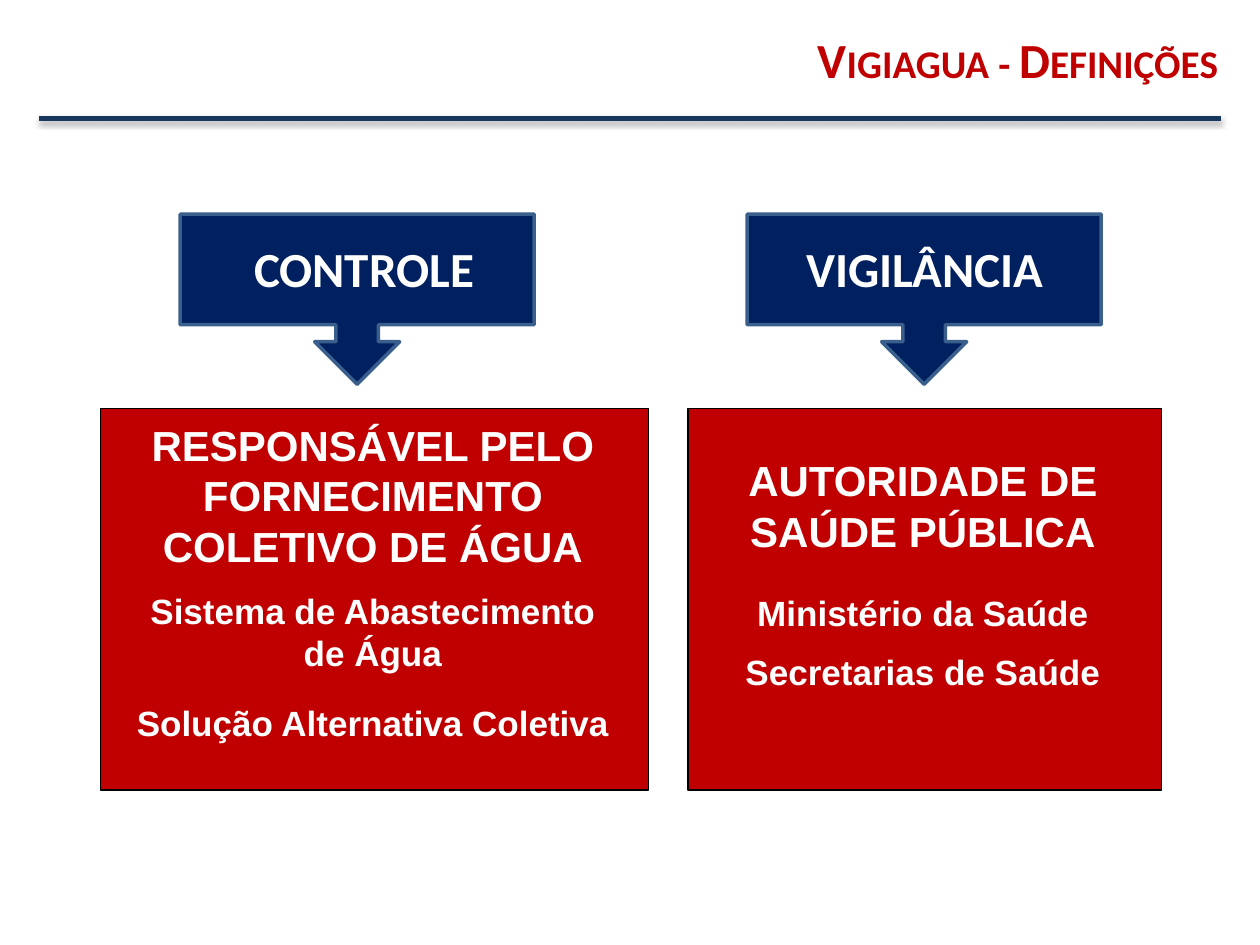
from lxml.etree import SubElement
from pptx import Presentation
from pptx.dml.color import RGBColor
from pptx.enum.shapes import MSO_CONNECTOR, MSO_SHAPE
from pptx.enum.text import MSO_ANCHOR, PP_ALIGN
from pptx.oxml.ns import qn
from pptx.util import Inches, Pt

NAVY = RGBColor(0x00, 0x20, 0x60)
STEEL = RGBColor(0x3A, 0x5F, 0x8C)
RULE_BLUE = RGBColor(0x17, 0x37, 0x5E)
RED = RGBColor(0xC0, 0x00, 0x00)
WHITE = RGBColor(0xFF, 0xFF, 0xFF)
BLACK = RGBColor(0x00, 0x00, 0x00)

TITLE = "Vigiagua - Definições"
COLUMNS = [
    {
        "heading": "CONTROLE",
        "callout_left": 1.43,
        "heading_box": (1.56, 1.84, 2.66, 0.57),
        "panel": (0.8, 3.24, 4.35, 3.03),
        "body_box": (0.93, 3.28, 4.06, 2.51),
        "body": [
            ("RESPONSÁVEL PELO FORNECIMENTO COLETIVO DE ÁGUA", {"size": 24}),
            ("Sistema de Abastecimento de Água", {"before": 11}),
            ("Solução Alternativa Coletiva", {"before": 6, "spacing": 1.4}),
        ],
    },
    {
        "heading": "VIGILÂNCIA",
        "callout_left": 5.93,
        "heading_box": (5.97, 1.84, 2.74, 0.57),
        "panel": (5.46, 3.24, 3.76, 3.03),
        "body_box": (5.76, 3.56, 3.13, 2.03),
        "body": [
            ("AUTORIDADE DE SAÚDE PÚBLICA", {"size": 24}),
            ("Ministério da Saúde", {"before": 11, "spacing": 1.4}),
            ("Secretarias de Saúde", {"spacing": 1.4}),
        ],
    },
]


def write(paragraph, text, size=20, font="Arial", color=WHITE,
          align=PP_ALIGN.CENTER, before=0, spacing=1.0, small_caps=False):
    paragraph.alignment = align
    paragraph.space_before = Pt(before)
    paragraph.line_spacing = spacing
    run = paragraph.add_run()
    run.text = text
    run.font.size = Pt(size)
    run.font.name = font
    run.font.bold = True
    run.font.color.rgb = color
    if small_caps:
        run.font._element.set("cap", "small")


def add_box(slide, kind, box, fill, line, width):
    shape = slide.shapes.add_shape(kind, *map(Inches, box))
    shape.shadow.inherit = False
    shape.fill.solid()
    shape.fill.fore_color.rgb = fill
    shape.line.color.rgb = line
    shape.line.width = Pt(width)


def add_text(slide, box, items):
    frame = slide.shapes.add_textbox(*map(Inches, box)).text_frame
    frame.word_wrap = True
    for index, (text, style) in enumerate(items):
        paragraph = frame.add_paragraph() if index else frame.paragraphs[0]
        write(paragraph, text, **style)


def add_title(slide):
    title = slide.shapes.title
    title.left, title.top, title.width, title.height = map(Inches, (4.61, 0.16, 5.16, 0.62))
    title.text_frame.vertical_anchor = MSO_ANCHOR.MIDDLE
    write(title.text_frame.paragraphs[0], TITLE, size=28, font="Calibri",
          color=RED, align=PP_ALIGN.RIGHT, small_caps=True)


def add_rule(slide):
    rule = slide.shapes.add_connector(
        MSO_CONNECTOR.STRAIGHT, *map(Inches, (0.31, 0.94, 9.69, 0.94)))
    rule.line.color.rgb = RULE_BLUE
    rule.line.width = Pt(3)
    effects = SubElement(rule._element.spPr, qn("a:effectLst"))
    shadow = SubElement(effects, qn("a:outerShdw"), blurRad=str(Pt(3.1)),
                        dist=str(Pt(1.8)), dir="5400000", rotWithShape="0")
    color = SubElement(shadow, qn("a:srgbClr"), val=str(BLACK))
    SubElement(color, qn("a:alpha"), val="35000")


def add_column(slide, column):
    callout = (column["callout_left"], 1.7, 2.81, 1.35)
    add_box(slide, MSO_SHAPE.DOWN_ARROW_CALLOUT, callout, NAVY, STEEL, 2)
    add_text(slide, column["heading_box"],
             [(column["heading"], {"size": 28, "font": "Calibri"})])
    add_box(slide, MSO_SHAPE.RECTANGLE, column["panel"], RED, BLACK, 0.75)
    add_text(slide, column["body_box"], column["body"])


def main():
    presentation = Presentation()
    presentation.slide_width = Inches(10)
    presentation.slide_height = Inches(7.5)
    slide = presentation.slides.add_slide(presentation.slide_layouts[5])
    add_title(slide)
    add_rule(slide)
    for column in COLUMNS:
        add_column(slide, column)
    presentation.save("out.pptx")


if __name__ == "__main__":
    main()
